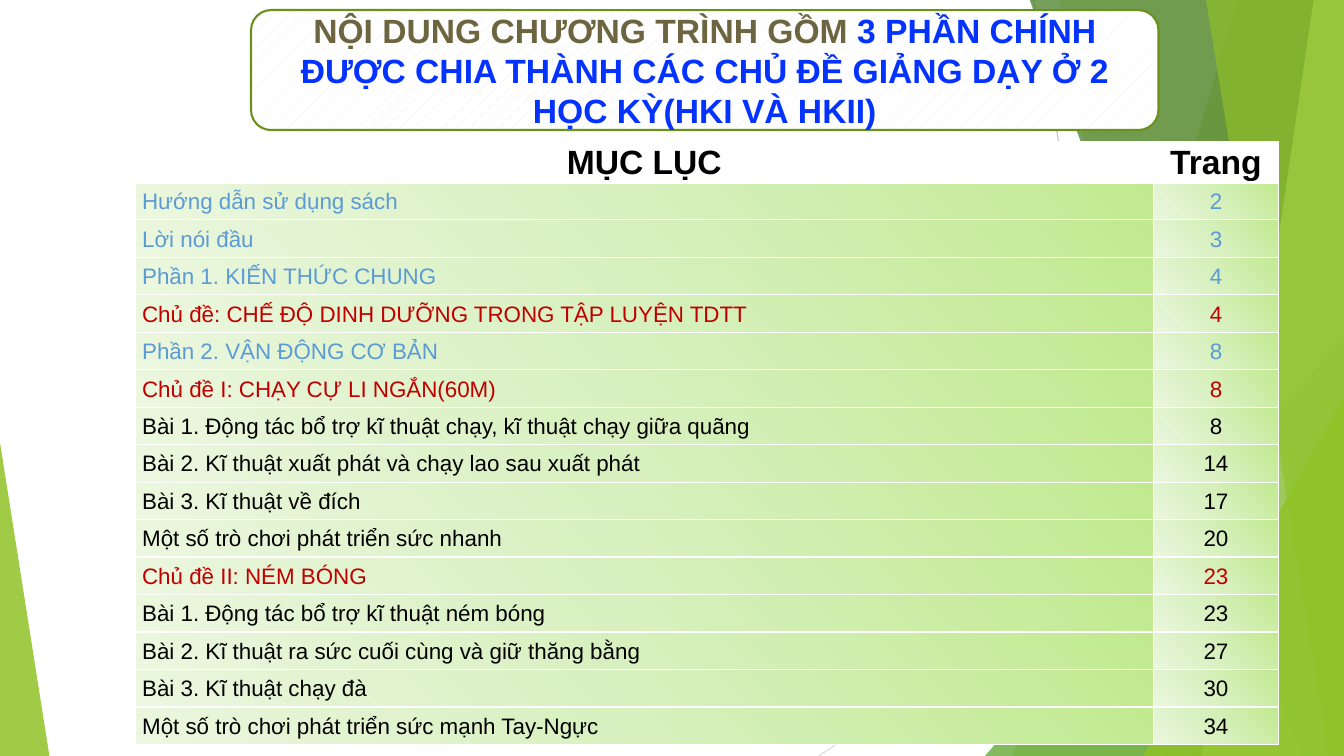
"""Draw the contents slide with its green facets, page table and title box."""
from dataclasses import dataclass

from lxml.etree import SubElement
from pptx import Presentation
from pptx.dml.color import RGBColor
from pptx.dml.fill import FillFormat
from pptx.enum.dml import MSO_PATTERN
from pptx.enum.shapes import MSO_CONNECTOR, MSO_SHAPE
from pptx.enum.text import MSO_ANCHOR, PP_ALIGN
from pptx.oxml import parse_xml
from pptx.oxml.ns import nsdecls, qn
from pptx.shapes.autoshape import Shape
from pptx.shapes.shapetree import SlideShapes
from pptx.table import Table, _Cell
from pptx.text.text import _Paragraph
from pptx.util import Inches, Pt

WIDE, HIGH, TOP = 13.33, 7.5, -0.01
BLACK, WHITE, BLUE, RED = "000000", "FFFFFF", "5B9BD5", "C00000"
STOPS = ((0, "C1EA90"), (50, "D7F0BD"), (100, "EBF7DF"))


@dataclass
class Ray:
    start: tuple[float, float]
    end: tuple[float, float]
    color: str


@dataclass
class Facet:
    top: float
    base: float
    color: str
    alpha: int


@dataclass
class Wedge:
    left: float
    top: float
    width: float
    tip: int
    color: str
    alpha: int


@dataclass
class Entry:
    title: str
    page: str
    color: str = BLACK


RAYS = [
    Ray((10.25, 0), (11.58, HIGH), "BFBFBF"),
    Ray((WIDE, 4.03), (8.12, HIGH), "D9D9D9"),
]
PANES = [
    Facet(12.28, 10.04, "90C226", 30),
    Facet(10.5, 11.83, "90C226", 20),
    Wedge(9.77, 3.33, 3.56, 1, "54A021", 72),
    Facet(10.21, 12.91, "3F7819", 70),
    Facet(13.03, 11.92, "C0E474", 70),
    Facet(11.96, 13.18, "90C226", 65),
    Wedge(11.34, 3.93, 1.99, 1, "90C226", 80),
    Wedge(0, 4.39, 0.49, 0, "90C226", 85),
]
ENTRIES = [
    Entry("Hướng dẫn sử dụng sách", "2", BLUE),
    Entry("Lời nói đầu", "3", BLUE),
    Entry("Phần 1. KIẾN THỨC CHUNG", "4", BLUE),
    Entry("Chủ đề: CHẾ ĐỘ DINH DƯỠNG TRONG TẬP LUYỆN TDTT", "4", RED),
    Entry("Phần 2. VẬN ĐỘNG CƠ BẢN", "8", BLUE),
    Entry("Chủ đề I: CHẠY CỰ LI NGẮN(60M)", "8", RED),
    Entry("Bài 1. Động tác bổ trợ kĩ thuật chạy, kĩ thuật chạy giữa quãng", "8"),
    Entry("Bài 2. Kĩ thuật xuất phát và chạy lao sau xuất phát", "14"),
    Entry("Bài 3. Kĩ thuật về đích", "17"),
    Entry("Một số trò chơi phát triển sức nhanh", "20"),
    Entry("Chủ đề II: NÉM BÓNG", "23", RED),
    Entry("Bài 1. Động tác bổ trợ kĩ thuật ném bóng", "23"),
    Entry("Bài 2. Kĩ thuật ra sức cuối cùng và giữ thăng bằng", "27"),
    Entry("Bài 3. Kĩ thuật chạy đà", "30"),
    Entry("Một số trò chơi phát triển sức mạnh Tay-Ngực", "34"),
]


def hue(code: str) -> RGBColor:
    return RGBColor.from_string(code)


def paint(fill: FillFormat, code: str) -> None:
    fill.solid()
    fill.fore_color.rgb = hue(code)


def write(para: _Paragraph, text: str, size: float, color: str, bold: bool) -> None:
    run = para.add_run()
    run.text = text
    run.font.name = "Arial"
    run.font.size = Pt(size)
    run.font.bold = bold
    run.font.color.rgb = hue(color)


def draw_ray(shapes: SlideShapes, ray: Ray) -> None:
    ends = [Inches(n) for n in (*ray.start, *ray.end)]
    line = shapes.add_connector(MSO_CONNECTOR.STRAIGHT, *ends)
    line.line.color.rgb = hue(ray.color)
    line.line.width = Pt(0.75)
    SubElement(line._element.spPr, qn("a:effectLst"))


def make_facet(shapes: SlideShapes, facet: Facet) -> Shape:
    pen = shapes.build_freeform(Inches(facet.top), Inches(TOP))
    corners = [(WIDE, TOP), (WIDE, HIGH), (facet.base, HIGH)]
    pen.add_line_segments([(Inches(x), Inches(y)) for x, y in corners])
    return pen.convert_to_shape()


def make_wedge(shapes: SlideShapes, wedge: Wedge) -> Shape:
    box = (wedge.left, wedge.top, wedge.width, HIGH - wedge.top)
    shape = shapes.add_shape(MSO_SHAPE.ISOSCELES_TRIANGLE, *map(Inches, box))
    shape.adjustments[0] = wedge.tip
    return shape


def draw_pane(shapes: SlideShapes, pane: Facet | Wedge) -> None:
    make = make_facet if isinstance(pane, Facet) else make_wedge
    shape = make(shapes, pane)
    shape.shadow.inherit = False
    shape.line.fill.background()
    paint(shape.fill, pane.color)
    tint = shape._element.spPr.find(qn("a:solidFill"))[0]
    SubElement(tint, qn("a:alpha"), val=str(pane.alpha * 1000))


def edge_cell(cell: _Cell, row: int) -> None:
    props = cell._tc.get_or_add_tcPr()
    thick = {0: "B", 1: "T"}.get(row)
    for spot, side in enumerate("LRTB"):
        width = Pt(3 if side == thick else 1)
        props.insert(spot, parse_xml(
            f'<a:ln{side} {nsdecls("a")} w="{width}"><a:solidFill>'
            f'<a:srgbClr val="{WHITE}"/></a:solidFill></a:ln{side}>'))


def blend_cell(cell: _Cell) -> None:
    stops = "".join(f'<a:gs pos="{pos * 1000}"><a:srgbClr val="{code}"/></a:gs>'
                    for pos, code in STOPS)
    cell._tc.get_or_add_tcPr().append(parse_xml(
        f'<a:gradFill {nsdecls("a")} rotWithShape="1"><a:gsLst>{stops}</a:gsLst>'
        '<a:path path="circle"><a:fillToRect l="100000" b="100000"/></a:path>'
        '</a:gradFill>'))


def fill_row(table: Table, row: int, entry: Entry) -> None:
    head = row == 0
    for col, text in enumerate((entry.title, entry.page)):
        cell = table.cell(row, col)
        cell.vertical_anchor = MSO_ANCHOR.MIDDLE
        cell.margin_left = cell.margin_right = Inches(0.07)
        cell.margin_top = cell.margin_bottom = 0
        para = cell.text_frame.paragraphs[0]
        para.alignment = PP_ALIGN.CENTER if head or col else PP_ALIGN.LEFT
        para.line_spacing = 1.07
        if head and col == 0:
            para.space_before = Pt(12)
        write(para, text, 24 if head else 16, entry.color, head)
        if head:
            paint(cell.fill, WHITE)
        else:
            blend_cell(cell)
        edge_cell(cell, row)


def draw_table(shapes: SlideShapes) -> None:
    rows = [Entry("MỤC LỤC", "Trang"), *ENTRIES]
    box = map(Inches, (1.34, 1.4, 11.34, 5.99))
    table = shapes.add_table(len(rows), 2, *box).table
    table.first_row = table.horz_banding = False
    for col, width in zip(table.columns, (10.1, 1.24)):
        col.width = Inches(width)
    for row, entry in enumerate(rows):
        table.rows[row].height = Inches(5.58 / len(ENTRIES) if row else 0.41)
        fill_row(table, row, entry)


def draw_title(shapes: SlideShapes) -> None:
    box = map(Inches, (2.49, 0.1, 9, 1.19))
    shape = shapes.add_shape(MSO_SHAPE.ROUNDED_RECTANGLE, *box)
    shape.shadow.inherit = False
    shape.fill.patterned()
    shape.fill.pattern = MSO_PATTERN.PERCENT_5
    shape.fill.fore_color.rgb = hue("EBEBEB")
    shape.fill.back_color.rgb = hue(WHITE)
    shape.line.color.rgb = hue("6B901C")
    shape.line.width = Pt(1.5)
    frame = shape.text_frame
    frame.word_wrap = True
    frame.vertical_anchor = MSO_ANCHOR.MIDDLE
    para = frame.paragraphs[0]
    para.alignment = PP_ALIGN.CENTER
    para.space_before = Pt(10)
    write(para, "NỘI DUNG CHƯƠNG TRÌNH GỒM ", 24, "6D6540", True)
    write(para, "3 PHẦN CHÍNH ĐƯỢC CHIA THÀNH CÁC CHỦ ĐỀ GIẢNG DẠY Ở 2 "
          "HỌC KỲ(HKI VÀ HKII)", 24, "0432FF", True)


def main() -> None:
    deck = Presentation()
    deck.slide_width, deck.slide_height = Inches(WIDE), Inches(HIGH)
    shapes = deck.slides.add_slide(deck.slide_layouts[6]).shapes
    for ray in RAYS:
        draw_ray(shapes, ray)
    for pane in PANES:
        draw_pane(shapes, pane)
    draw_table(shapes)
    draw_title(shapes)
    deck.save("out.pptx")


if __name__ == "__main__":
    main()
